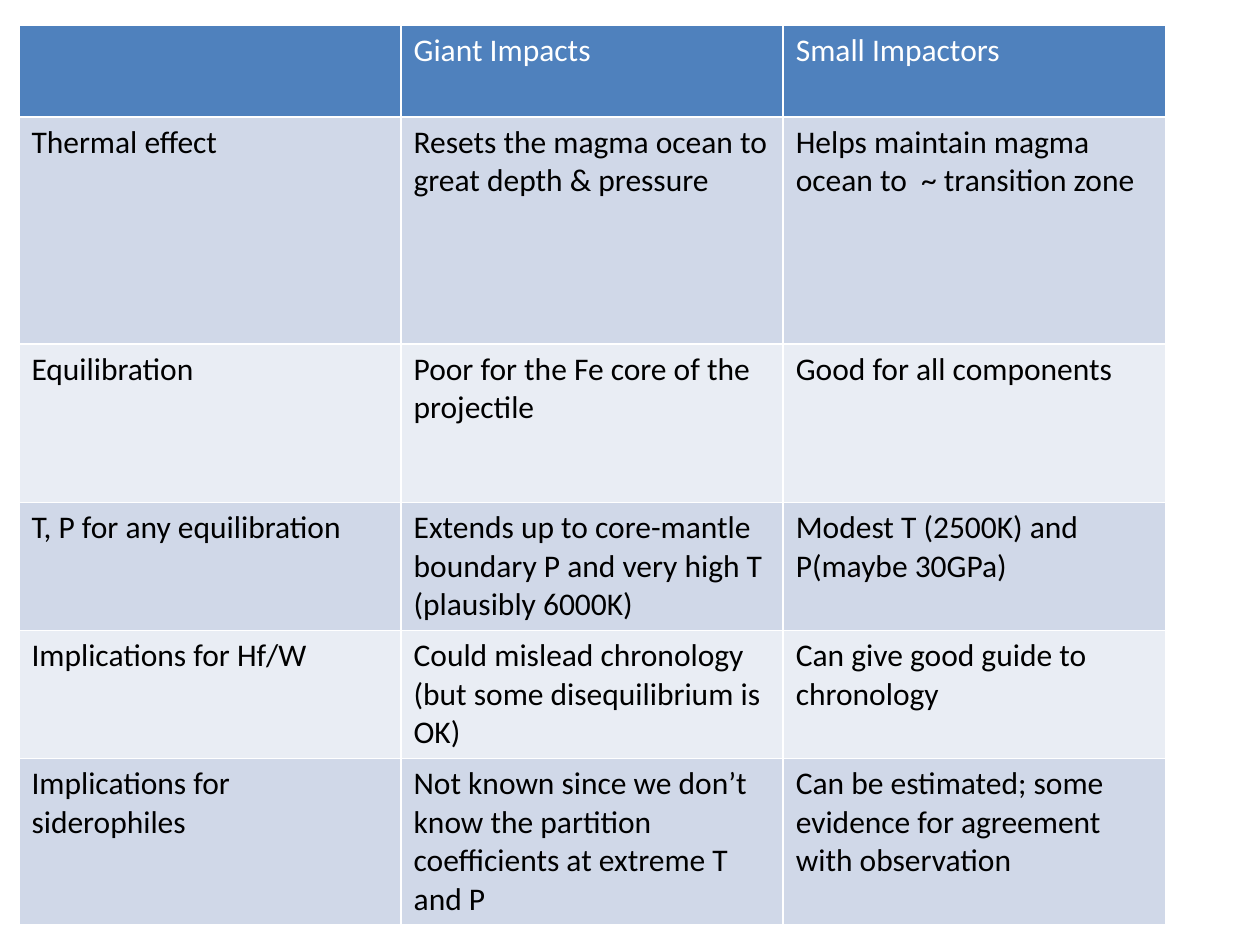
"""Build a slide with a table comparing giant and small impacts."""
from lxml import etree
from pptx import Presentation
from pptx.dml.color import RGBColor
from pptx.oxml.ns import qn
from pptx.util import Pt

FONT = "Calibri"
COLORS = {
    "head": "4F81BD",
    "odd": "D0D8E8",
    "even": "E9EDF4",
    "white": "FFFFFF",
    "black": "000000",
}
WIDTH = 218.4
HEIGHTS = [52.5, 129.6, 90.7, 70.5, 70.5, 91.5]
ROWS = [
    ["", "Giant Impacts", "Small Impactors"],
    ["Thermal effect",
     "Resets the magma ocean to great depth & pressure",
     "Helps maintain magma ocean to  ~ transition zone"],
    ["Equilibration",
     "Poor for the Fe core of the projectile",
     "Good for all components"],
    ["T, P for any equilibration",
     "Extends up to core-mantle boundary P and very high T (plausibly 6000K)",
     "Modest T (2500K) and P(maybe 30GPa)"],
    ["Implications for Hf/W",
     "Could mislead chronology (but some disequilibrium is OK)",
     "Can give good guide to chronology"],
    ["Implications for siderophiles",
     "Not known since we don’t know the partition coefficients at extreme T and P",
     "Can be estimated; some evidence for agreement with observation"],
]


def color(name):
    """Return the named colour."""
    return RGBColor.from_string(COLORS[name])


def add_edges(cell):
    """Draw a thin white line on each side of a cell."""
    props = cell._tc.get_or_add_tcPr()
    for side in ("a:lnL", "a:lnR", "a:lnT", "a:lnB"):
        line = etree.SubElement(props, qn(side), w=str(Pt(1)))
        fill = etree.SubElement(line, qn("a:solidFill"))
        etree.SubElement(fill, qn("a:srgbClr"), val=COLORS["white"])


def fill_cell(cell, text, back, ink):
    """Set the edges, fill and text of a cell."""
    add_edges(cell)
    cell.fill.solid()
    cell.fill.fore_color.rgb = color(back)
    para = cell.text_frame.paragraphs[0]
    para.font.size = Pt(18)
    if text:
        run = para.add_run()
        run.text = text
        run.font.name = FONT
        run.font.size = Pt(18)
        run.font.bold = False
        run.font.color.rgb = color(ink)


def add_grid(slide):
    """Add the table with its header and banded rows."""
    count = len(ROWS[0])
    frame = slide.shapes.add_table(
        len(ROWS), count, Pt(10.8), Pt(14.4), Pt(WIDTH * count), Pt(sum(HEIGHTS)))
    table = frame.table
    for col in table.columns:
        col.width = Pt(WIDTH)
    for i, (texts, height) in enumerate(zip(ROWS, HEIGHTS)):
        table.rows[i].height = Pt(height)
        back = "head" if i == 0 else "odd" if i % 2 else "even"
        ink = "black" if i else "white"
        for j, text in enumerate(texts):
            fill_cell(table.cell(i, j), text, back, ink)


def main():
    """Create the deck and save it."""
    deck = Presentation()
    deck.slide_width = Pt(720)
    deck.slide_height = Pt(540)
    slide = deck.slides.add_slide(deck.slide_layouts[6])
    add_grid(slide)
    deck.save("out.pptx")


if __name__ == "__main__":
    main()
